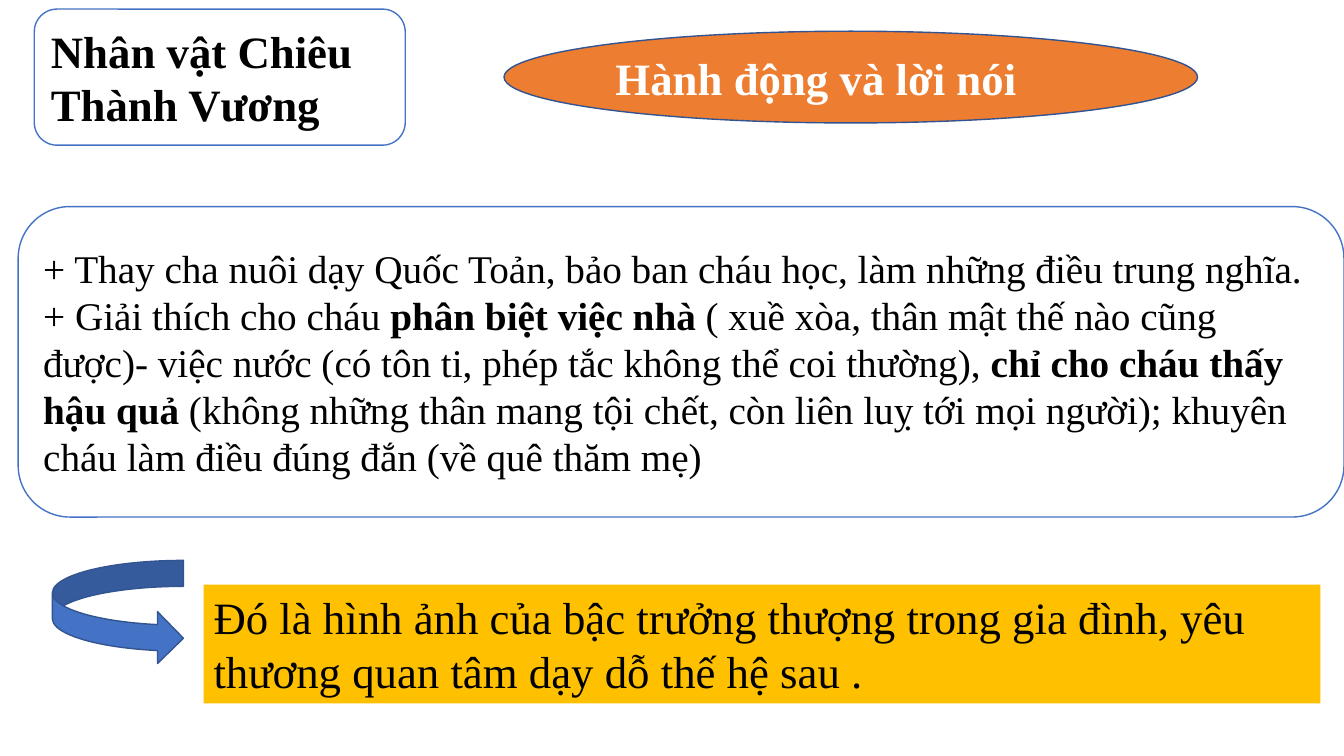
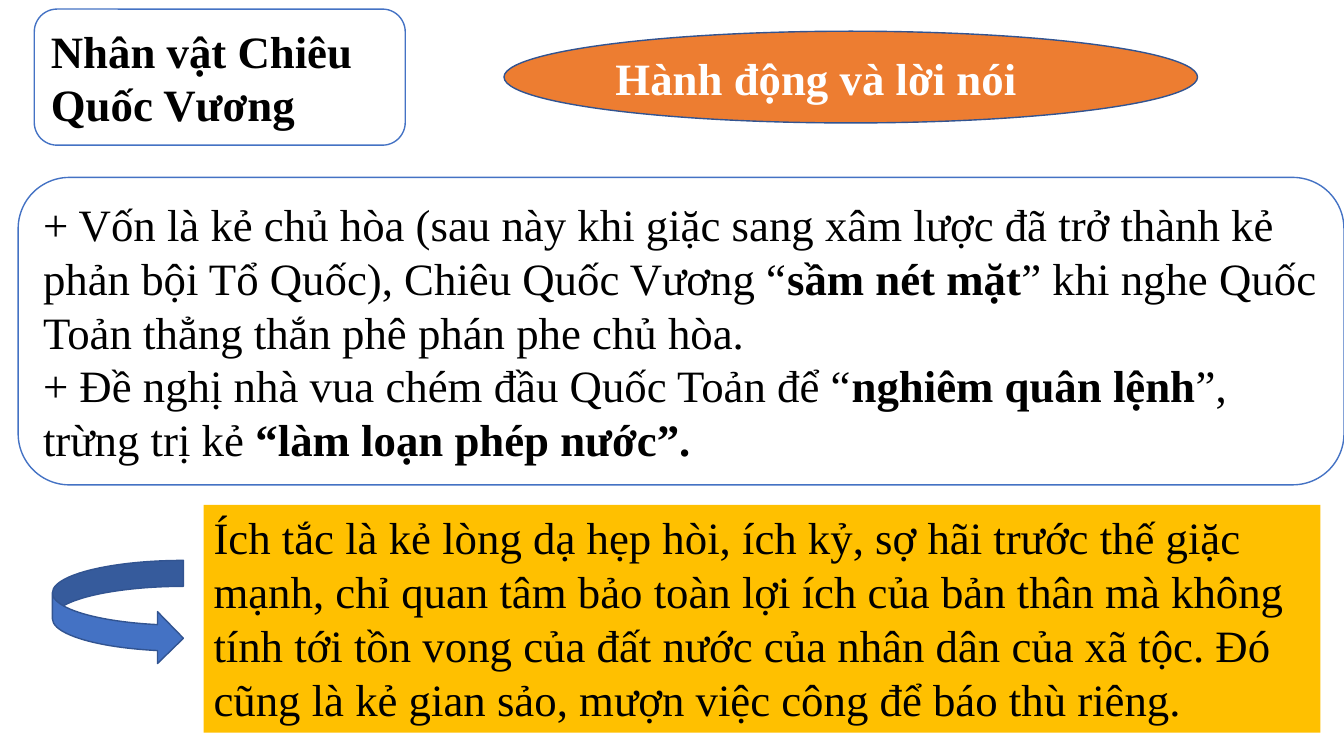
from dataclasses import dataclass

import pptx
import pptx.dml.color
import pptx.enum.shapes
import pptx.enum.text
import pptx.util

SHAPES = pptx.enum.shapes.MSO_SHAPE
ANCHORS = pptx.enum.text.MSO_ANCHOR


@dataclass(frozen=True)
class Theme:
    font: str = "Times New Roman"
    paper: str = "FFFFFF"
    ink: str = "000000"
    blue: str = "4472C4"
    navy: str = "325491"
    orange: str = "ED7D31"
    gold: str = "FFC000"
    large: int = 32
    medium: int = 28
    outline: int = 1


THEME = Theme()
WIDTH, HEIGHT = pptx.util.Inches(13.333), pptx.util.Inches(7.5)

TOPIC = "Hành động và lời nói"

# Runs alternate between regular and bold.
CHARACTERS = [
    {
        "name": "Nhân vật Chiêu Thành Vương",
        "deeds": [
            ["+ Thay cha nuôi dạy Quốc Toản, bảo ban cháu học, làm những điều trung nghĩa."],
            [
                "+ Giải thích cho cháu ",
                "phân biệt việc nhà",
                " ( xuề xòa, thân mật thế nào cũng được)- việc nước (có tôn ti, "
                "phép tắc không thể coi thường), ",
                "chỉ cho cháu thấy hậu quả",
                " (không những thân mang tội chết, còn liên luỵ tới mọi người); "
                "khuyên cháu làm điều đúng đắn (về quê thăm mẹ)",
            ],
        ],
        "deeds_size": THEME.medium,
        "deeds_rows": (27.33, 41.07),
        "verdict": "Đó là hình ảnh của bậc trưởng thượng trong gia đình, yêu thương "
                   "quan tâm dạy dỗ thế hệ sau .",
        "verdict_rows": (77.33, 15.73),
    },
    {
        "name": "Nhân vật Chiêu Quốc Vương",
        "deeds": [
            [
                "+ Vốn là kẻ chủ hòa (sau này khi giặc sang xâm lược đã trở thành kẻ "
                "phản bội Tổ Quốc), Chiêu Quốc Vương “",
                "sầm nét mặt",
                "” khi nghe Quốc Toản thẳng thắn phê phán phe chủ hòa.",
            ],
            [
                "+ Đề nghị nhà vua chém đầu Quốc Toản để “",
                "nghiêm quân lệnh",
                "”, trừng trị kẻ ",
                "“làm loạn phép nước”.",
            ],
        ],
        "deeds_size": THEME.large,
        "deeds_rows": (23.47, 40.67),
        "verdict": "Ích tắc là kẻ lòng dạ hẹp hòi, ích kỷ, sợ hãi trước thế giặc mạnh, "
                   "chỉ quan tâm bảo toàn lợi ích của bản thân mà không tính tới tồn vong "
                   "của đất nước của nhân dân của xã tộc. Đó cũng là kẻ gian sảo, mượn "
                   "việc công để báo thù riêng.",
        "verdict_rows": (66.8, 30.13),
    },
]

NAME_AREA = ((2.55, 27.6), (1.2, 18))
TOPIC_AREA = ((37.5, 51.6), (4.13, 12.13))
ARROW_AREA = ((3.9, 9.75), (74.13, 13.73))
DEEDS_COLUMNS = (1.35, 98.65)
VERDICT_COLUMNS = (15.15, 83.1)


def rgb(color):
    return pptx.dml.color.RGBColor.from_string(color)


def add_panel(slide, preset, area, fill, line=None):
    (left, width), (top, height) = area
    panel = slide.shapes.add_shape(
        preset,
        round(WIDTH * left / 100), round(HEIGHT * top / 100),
        round(WIDTH * width / 100), round(HEIGHT * height / 100))
    panel.shadow.inherit = False
    panel.fill.solid()
    panel.fill.fore_color.rgb = rgb(fill)
    if line:
        panel.line.color.rgb = rgb(line)
        panel.line.width = pptx.util.Pt(THEME.outline)
    else:
        panel.line.fill.background()
    return panel


def write(panel, paragraphs, size=THEME.large, color=THEME.ink, anchor=ANCHORS.MIDDLE):
    frame = panel.text_frame
    frame.word_wrap = True
    frame.vertical_anchor = anchor
    for row, runs in enumerate(paragraphs):
        paragraph = frame.add_paragraph() if row else frame.paragraphs[0]
        paragraph.alignment = pptx.enum.text.PP_ALIGN.LEFT
        for position, text in enumerate(runs):
            if not text:
                continue
            run = paragraph.add_run()
            run.text = text
            run.font.name = THEME.font
            run.font.size = pptx.util.Pt(size)
            run.font.bold = position % 2 == 1
            run.font.color.rgb = rgb(color)


def add_character(deck, character):
    slide = deck.slides.add_slide(deck.slide_layouts[6])
    name = add_panel(slide, SHAPES.ROUNDED_RECTANGLE, NAME_AREA, THEME.paper, THEME.blue)
    write(name, [["", character["name"]]])

    deeds = add_panel(slide, SHAPES.ROUNDED_RECTANGLE,
                      (DEEDS_COLUMNS, character["deeds_rows"]), THEME.paper, THEME.blue)
    write(deeds, character["deeds"], character["deeds_size"])

    topic = add_panel(slide, SHAPES.OVAL, TOPIC_AREA, THEME.orange, THEME.navy)
    write(topic, [["", TOPIC]], color=THEME.paper)

    add_panel(slide, SHAPES.CURVED_RIGHT_ARROW, ARROW_AREA, THEME.blue, THEME.navy)

    verdict = add_panel(slide, SHAPES.RECTANGLE,
                        (VERDICT_COLUMNS, character["verdict_rows"]), THEME.gold)
    write(verdict, [[character["verdict"]]], anchor=ANCHORS.TOP)
    verdict.text_frame.auto_size = pptx.enum.text.MSO_AUTO_SIZE.SHAPE_TO_FIT_TEXT


def main():
    deck = pptx.Presentation()
    deck.slide_width, deck.slide_height = WIDTH, HEIGHT
    for character in CHARACTERS:
        add_character(deck, character)
    deck.save("out.pptx")


if __name__ == "__main__":
    main()
